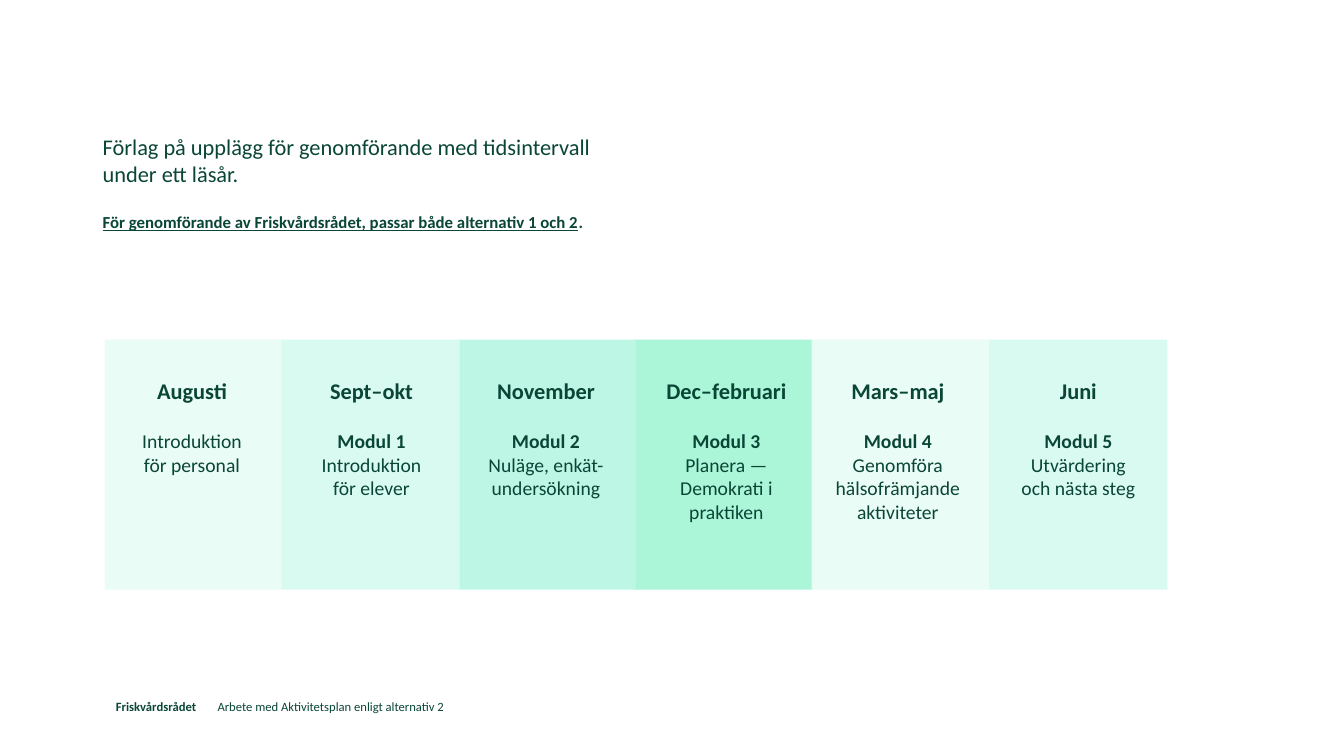
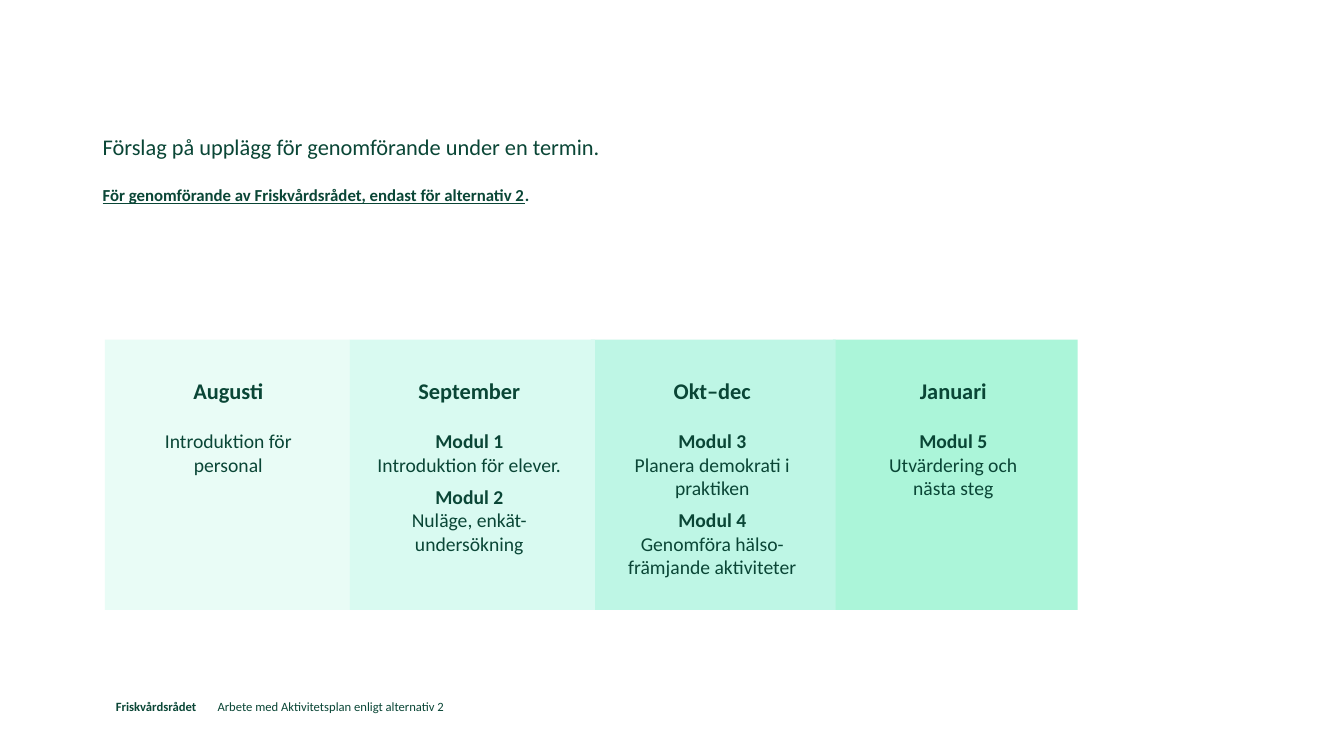
import lxml.etree
import pptx
import pptx.dml.color
import pptx.enum.shapes
import pptx.enum.text
import pptx.oxml.ns
import pptx.util

Inches = pptx.util.Inches
Pt = pptx.util.Pt
Color = pptx.dml.color.RGBColor

GREEN = Color(0x0A, 0x46, 0x36)
PALE = Color(0xE9, 0xFC, 0xF6)
SOFT = Color(0xD9, 0xFA, 0xF1)
MID = Color(0xBE, 0xF6, 0xE5)
DEEP = Color(0xAB, 0xF5, 0xD9)
STACK = [DEEP, MID, PALE, SOFT]
FONT = "Calibri"
CENTER = pptx.enum.text.PP_ALIGN.CENTER

YEAR = {
    "lead": "Förlag på upplägg för genomförande med tidsintervall under ett läsår.",
    "note": "För genomförande av Friskvårdsrådet, passar både alternativ 1 och 2",
    "size": (1.77, 2.48),
    "steps": [
        (1.04, PALE, 1.18, 1.45, "Augusti", [("", "Introduktion för personal")]),
        (2.79, SOFT, 2.96, 1.45, "Sept–okt", [("Modul 1", "Introduktion för elever")]),
        (4.54, MID, 4.69, 1.45, "November", [("Modul 2", "Nuläge, enkät-undersökning")]),
        (6.29, DEEP, 6.48, 1.45, "Dec–februari", [("Modul 3", "Planera — Demokrati i praktiken")]),
        (8.05, PALE, 8.18, 1.45, "Mars–maj", [("Modul 4", "Genomföra hälsofrämjande aktiviteter")]),
        (9.81, SOFT, 9.97, 1.45, "Juni", [("Modul 5", "Utvärdering och nästa steg")]),
    ],
}
TERM = {
    "lead": "Förslag på upplägg för genomförande under en termin.",
    "note": "För genomförande av Friskvårdsrådet, endast för alternativ 2",
    "size": (2.43, 2.68),
    "steps": [
        (1.04, PALE, 1.18, 2.17, "Augusti", [("", "Introduktion för personal")]),
        (3.47, SOFT, 3.6, 2.11, "September", [
            ("Modul 1", "Introduktion för elever."),
            ("Modul 2", "Nuläge, enkät-undersökning")]),
        (5.86, MID, 6.03, 2.07, "Okt–dec", [
            ("Modul 3", "Planera demokrati i praktiken"),
            ("Modul 4", "Genomföra hälso-främjande aktiviteter")]),
        (8.26, DEEP, 8.44, 2.03, "Januari", [("Modul 5", "Utvärdering och\vnästa steg")]),
    ],
}


def add_box(slide, left, top, width, height):
    """Add a wrapping text box and return its text frame."""
    box = slide.shapes.add_textbox(Inches(left), Inches(top), Inches(width), Inches(height))
    box.text_frame.word_wrap = True
    return box.text_frame


def add_line(frame, text, size, bold=False, after=0, align=None):
    """Write a styled paragraph, filling the empty first one before adding more."""
    line = frame.paragraphs[0]
    if line.runs:
        line = frame.add_paragraph()
    line.text = text
    line.alignment = align
    line.space_after = Pt(after)
    font = line.font
    font.name, font.size, font.bold = FONT, Pt(size), bold
    font.color.rgb = GREEN
    return line


def add_intro(slide, lead, note):
    """Write the lead sentence and the underlined note."""
    frame = add_box(slide, 0.92, 1.27, 5.33, 1.44)
    add_line(frame, lead, 16, after=18)
    line = add_line(frame, note, 12, bold=True, after=18)
    line.runs[0].font.underline = True
    line.add_run().text = "."


def add_step(slide, left, top, width, month, parts):
    """Write a month and its modules as centred text."""
    frame = add_box(slide, left, top, width, 1.44)
    add_line(frame, month, 16, True, 18, CENTER).line_spacing = 1.5
    for spot, (name, text) in enumerate(parts, 1):
        if name:
            add_line(frame, name, 14, True, 0, CENTER)
        add_line(frame, text, 14, False, 18 if spot == len(parts) else 6, CENTER)


def add_band(slide, top, size, steps):
    """Draw the coloured columns and put the steps over them."""
    width, height = size
    for left, tone, *_ in sorted(steps, key=lambda step: STACK.index(step[1])):
        tile = slide.shapes.add_shape(
            pptx.enum.shapes.MSO_SHAPE.RECTANGLE,
            Inches(left), Inches(top), Inches(width), Inches(height))
        tile.shadow.inherit = False
        tile.fill.solid()
        tile.fill.fore_color.rgb = tone
        tile.line.fill.background()
    for _, _, left, span, month, parts in steps:
        add_step(slide, left, top + 0.19, span, month, parts)


def add_foot(slide):
    """Write the footer with its bold name and tabbed subject."""
    frame = add_box(slide, 1.05, 6.88, 7.23, 0.25)
    props = frame.paragraphs[0]._p.get_or_add_pPr()
    tabs = lxml.etree.SubElement(props, pptx.oxml.ns.qn("a:tabLst"))
    lxml.etree.SubElement(tabs, pptx.oxml.ns.qn("a:tab"), pos=str(Inches(1.01)), algn="l")
    line = add_line(frame, "Friskvårdsrådet", 9)
    line.runs[0].font.bold = True
    line.add_run().text = "\tArbete med Aktivitetsplan enligt alternativ 2"


def add_plan(deck, plan):
    """Build one timeline slide."""
    slide = deck.slides.add_slide(deck.slide_layouts[6])
    add_foot(slide)
    add_intro(slide, plan["lead"], plan["note"])
    add_band(slide, 3.37, plan["size"], plan["steps"])


def main():
    """Build and save the deck."""
    deck = pptx.Presentation()
    deck.slide_width, deck.slide_height = Inches(13.33), Inches(7.5)
    for plan in (YEAR, TERM):
        add_plan(deck, plan)
    deck.save("out.pptx")


if __name__ == "__main__":
    main()
